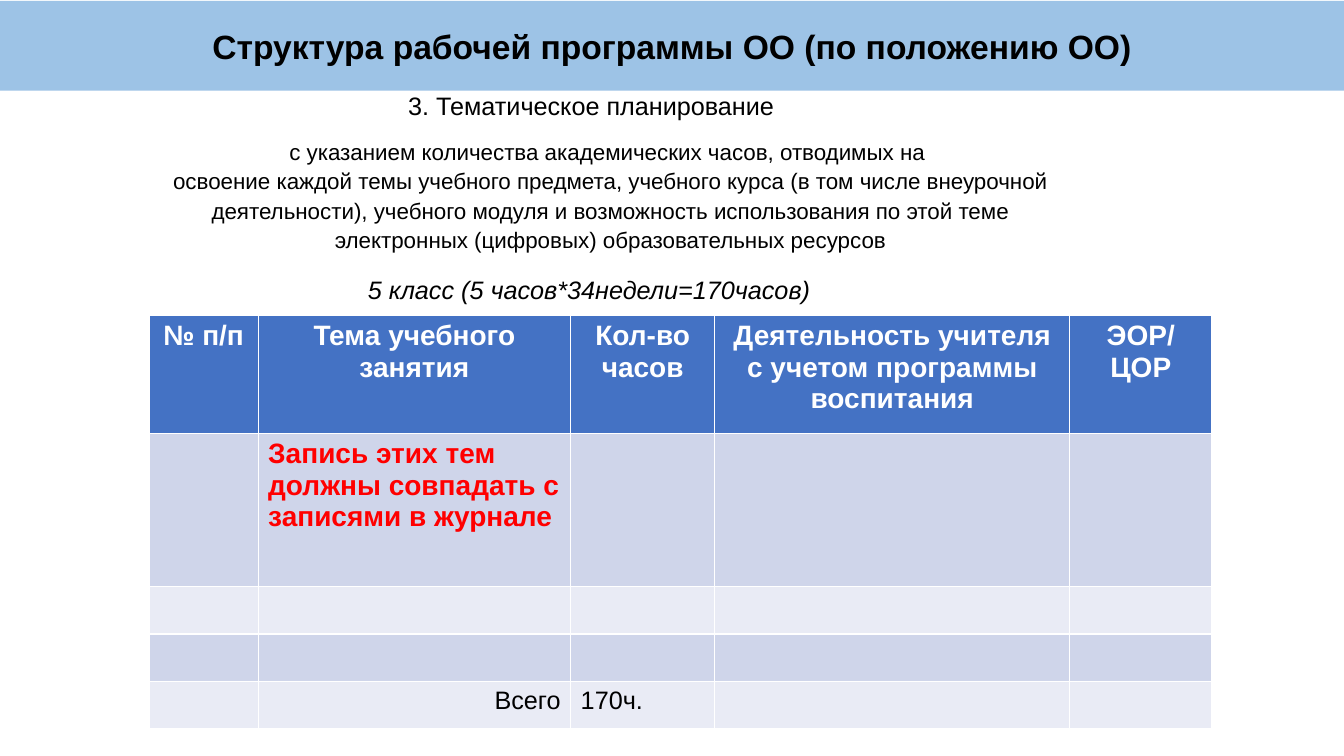
"""Build the slide on thematic planning in a school work programme."""
from dataclasses import dataclass

from pptx import Presentation
from pptx.dml.color import RGBColor
from pptx.enum.text import MSO_ANCHOR, MSO_AUTO_SIZE, PP_ALIGN
from pptx.slide import Slide
from pptx.text.text import TextFrame
from pptx.util import Inches, Pt

LEFT, CENTER, RIGHT = PP_ALIGN.LEFT, PP_ALIGN.CENTER, PP_ALIGN.RIGHT
MIDDLE = MSO_ANCHOR.MIDDLE
NO_FIT = MSO_AUTO_SIZE.NONE
TITLE_ONLY = 5


@dataclass(frozen=True)
class Theme:
    """Colours, type sizes and font of the slide."""
    font: str = "Arial"
    banner: str = "9DC3E6"
    header: str = "4472C4"
    bands: tuple[str, str] = ("CFD5EA", "E9EBF5")
    black: str = "000000"
    white: str = "FFFFFF"
    alert: str = "FF0000"
    title: int = 24
    table: int = 20
    text: int = 18
    detail: int = 16


@dataclass(frozen=True)
class Box:
    """Place and format of one block of text."""
    text: str
    left: float
    top: float
    width: float
    height: float
    size: int
    align: PP_ALIGN = LEFT
    italic: bool = False
    wrap: bool = False
    spacing: float = 1.0


@dataclass(frozen=True)
class Entry:
    """Text and format of one table cell."""
    text: str
    size: int
    color: str
    bold: bool
    align: PP_ALIGN = LEFT


THEME = Theme()
TITLE = "Структура рабочей программы ОО (по положению ОО)"
DETAILS = (
    "с указанием количества академических часов, отводимых на \n"
    "освоение каждой темы учебного предмета, учебного курса (в том числе "
    "внеурочной деятельности), учебного модуля и возможность использования "
    "по этой теме электронных (цифровых) образовательных ресурсов"
)
BOXES = (
    Box("3. Тематическое планирование", 3.95, 0.85, 3.87, 0.4, THEME.text),
    Box(DETAILS, 1.61, 1.29, 8.89, 1.33, THEME.detail, CENTER, wrap=True, spacing=1.1),
    Box("5 класс (5 часов*34недели=170часов)", 3.55, 2.67, 4.65, 0.4, THEME.text,
        italic=True),
)
HEADERS = ("№ п/п", "Тема учебного занятия", "Кол-во часов",
           "Деятельность учителя с учетом программы воспитания", "ЭОР/ЦОР")
COLUMN_WIDTHS = (1.08, 3.1, 1.43, 3.52, 1.41)
ROW_HEIGHTS = (1.17, 1.52, 0.47, 0.47, 0.47)
ENTRIES = {
    **{(0, i): Entry(name, THEME.table, THEME.white, True, CENTER)
       for i, name in enumerate(HEADERS)},
    (1, 1): Entry("Запись этих тем должны совпадать с записями в журнале",
                  THEME.table, THEME.alert, True),
    (4, 1): Entry("Всего", THEME.text, THEME.black, False, RIGHT),
    (4, 2): Entry("170ч.", THEME.text, THEME.black, False),
}


def write(tf: TextFrame, text: str, *, size: int, color: str = THEME.black,
          bold: bool = False, italic: bool = False, align: PP_ALIGN = LEFT,
          spacing: float = 1.0) -> None:
    """Write each line of text as a formatted paragraph."""
    for i, line in enumerate(text.split("\n")):
        p = tf.add_paragraph() if i else tf.paragraphs[0]
        p.alignment = align
        p.line_spacing = spacing
        r = p.add_run()
        r.text = line
        r.font.name = THEME.font
        r.font.size = Pt(size)
        r.font.bold = bold
        r.font.italic = italic
        r.font.color.rgb = RGBColor.from_string(color)


def add_title(s: Slide) -> None:
    """Turn the title placeholder into the banner."""
    sp = s.shapes.title
    sp.left, sp.top = Inches(0), Inches(0.01)
    sp.width, sp.height = Inches(13.33), Inches(0.89)
    sp.fill.solid()
    sp.fill.fore_color.rgb = RGBColor.from_string(THEME.banner)
    tf = sp.text_frame
    tf.auto_size = NO_FIT
    tf.vertical_anchor = MIDDLE
    write(tf, TITLE, size=THEME.title, bold=True, align=CENTER)


def add_box(s: Slide, box: Box) -> None:
    """Add one text box."""
    sp = s.shapes.add_textbox(Inches(box.left), Inches(box.top),
                              Inches(box.width), Inches(box.height))
    tf = sp.text_frame
    tf.word_wrap = box.wrap
    write(tf, box.text, size=box.size, italic=box.italic, align=box.align,
          spacing=box.spacing)


def add_plan(s: Slide) -> None:
    """Add the planning table with its header and banded rows."""
    table = s.shapes.add_table(
        len(ROW_HEIGHTS), len(COLUMN_WIDTHS), Inches(1.48), Inches(3.13),
        Inches(sum(COLUMN_WIDTHS)), Inches(sum(ROW_HEIGHTS))).table
    for column, width in zip(table.columns, COLUMN_WIDTHS):
        column.width = Inches(width)
    for i, (row, height) in enumerate(zip(table.rows, ROW_HEIGHTS)):
        row.height = Inches(height)
        fill = THEME.bands[(i - 1) % 2] if i else THEME.header
        for j, cell in enumerate(row.cells):
            cell.fill.solid()
            cell.fill.fore_color.rgb = RGBColor.from_string(fill)
            entry = ENTRIES.get((i, j))
            if entry:
                write(cell.text_frame, entry.text, size=entry.size, color=entry.color,
                      bold=entry.bold, align=entry.align)


def main() -> None:
    """Build and save the presentation."""
    prs = Presentation()
    prs.slide_width, prs.slide_height = Inches(13.33), Inches(7.5)
    s = prs.slides.add_slide(prs.slide_layouts[TITLE_ONLY])
    add_title(s)
    for box in BOXES:
        add_box(s, box)
    add_plan(s)
    prs.save("out.pptx")


if __name__ == "__main__":
    main()
